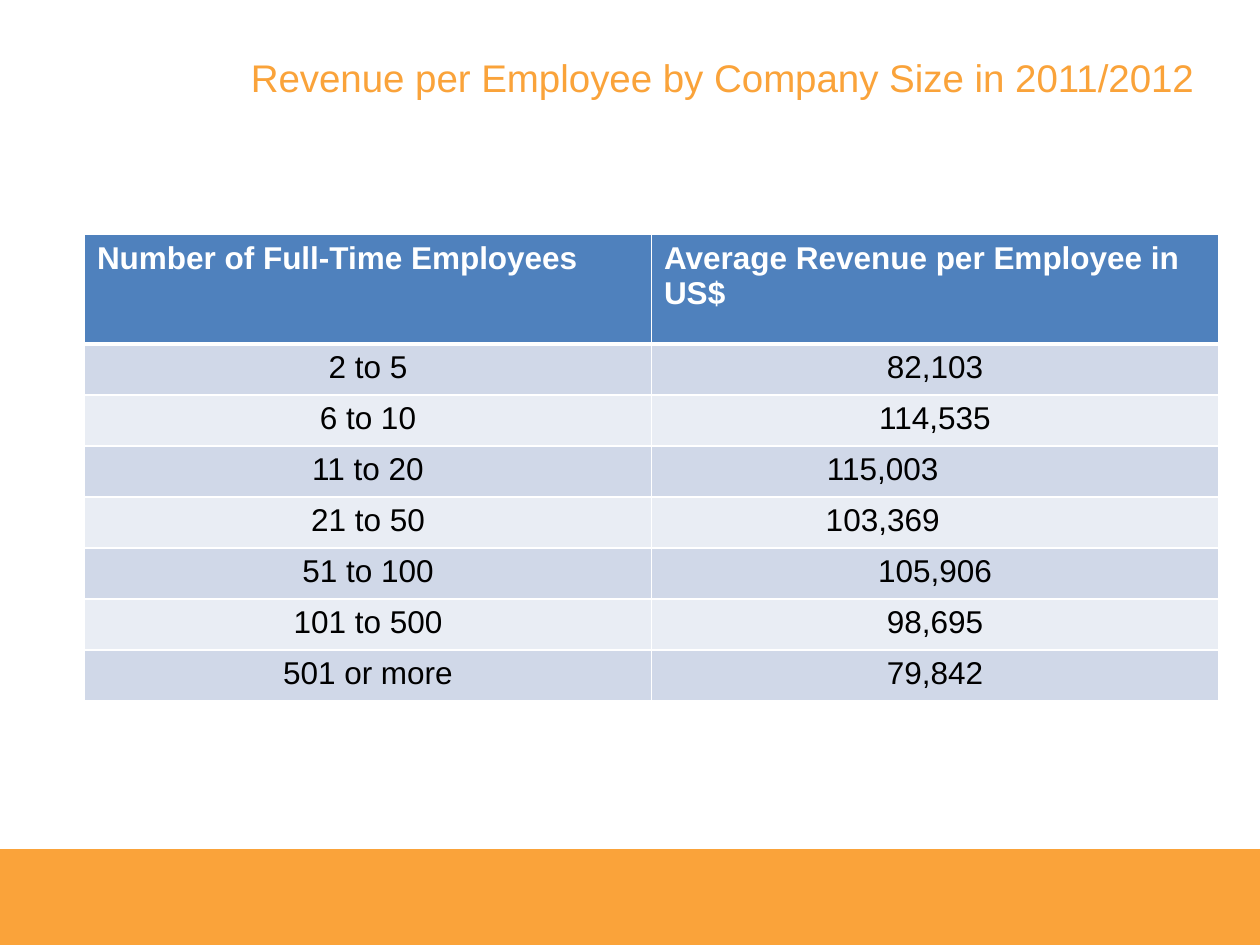
"""Build a slide with a table of revenue per employee by company size."""
from pptx import Presentation
from pptx import util as u
from pptx.dml.color import RGBColor
from pptx.enum import shapes, text
from pptx.oxml import parse_xml
from pptx.oxml.ns import nsdecls

TITLE = "Revenue per Employee by Company Size in 2011/2012"
HEAD = ("Number of Full-Time Employees", "Average Revenue per Employee in US$")
ROWS = [
    ("2 to 5", "82,103"),
    ("6 to 10", "114,535"),
    ("11 to 20", "115,003"),
    ("21 to 50", "103,369"),
    ("51 to 100", "105,906"),
    ("101 to 500", "98,695"),
    ("501 or more", "79,842"),
]
SHIFTED = {"115,003", "103,369"}
THEME = {
    "font": "Arial", "title": 22, "body": 18,
    "orange": "FAA33A", "head": "4F81BD", "bands": ("D0D8E8", "E9EDF4"),
    "white": "FFFFFF", "black": "000000",
}
WIDE, HIGH = 10, 7.5
LEFT, TOP, COL = 0.67, 1.86, 4.5
HEAD_H, ROW_H = 0.87, 0.405
FOOT = 6.74
INSET, SHIFT = 0.1, 0.83


def color(key):
    return RGBColor.from_string(key)


def write(frame, words, size, ink, align, bold=False):
    para = frame.paragraphs[0]
    para.alignment = align
    run = para.add_run()
    run.text = words
    font = run.font
    font.name, font.size, font.bold = THEME["font"], u.Pt(size), bold
    font.color.rgb = color(ink)


def edge(cell, low):
    props = cell._tc.get_or_add_tcPr()
    for side, width in (("L", 1), ("R", 1), ("T", 1), ("B", low)):
        props.append(parse_xml(
            f'<a:ln{side} {nsdecls("a")} w="{u.Pt(width)}"><a:solidFill>'
            f'<a:srgbClr val="{THEME["white"]}"/></a:solidFill></a:ln{side}>'))


def add_table(slide):
    rows = [HEAD, *ROWS]
    grid = slide.shapes.add_table(
        len(rows), len(HEAD), u.Inches(LEFT), u.Inches(TOP),
        u.Inches(COL * len(HEAD)), u.Inches(HEAD_H + ROW_H * len(ROWS))).table
    grid.first_row = grid.horz_banding = False
    for col in grid.columns:
        col.width = u.Inches(COL)
    for i, row in enumerate(rows):
        top = i == 0
        grid.rows[i].height = u.Inches(HEAD_H if top else ROW_H)
        fill = THEME["head"] if top else THEME["bands"][(i - 1) % 2]
        ink = THEME["white"] if top else THEME["black"]
        align = text.PP_ALIGN.LEFT if top else text.PP_ALIGN.CENTER
        for j, words in enumerate(row):
            cell = grid.cell(i, j)
            edge(cell, 3 if i == 0 else 1)
            if i == 1:
                cell._tc.tcPr[2].set("w", str(u.Pt(3)))
            cell.fill.solid()
            cell.fill.fore_color.rgb = color(fill)
            if words in SHIFTED:
                cell.margin_right = u.Inches(INSET + SHIFT)
            write(cell.text_frame, words, THEME["body"], ink, align, top)


def main():
    deck = Presentation()
    deck.slide_width, deck.slide_height = u.Inches(WIDE), u.Inches(HIGH)
    slide = deck.slides.add_slide(deck.slide_layouts[6])
    foot = slide.shapes.add_shape(
        shapes.MSO_SHAPE.RECTANGLE, 0, u.Inches(FOOT),
        u.Inches(WIDE), u.Inches(HIGH - FOOT))
    foot.shadow.inherit = False
    foot.fill.solid()
    foot.fill.fore_color.rgb = color(THEME["orange"])
    foot.line.fill.background()
    add_table(slide)
    box = slide.shapes.add_textbox(*map(u.Inches, (1.83, 0.24, 7.81, 0.75)))
    frame = box.text_frame
    frame.word_wrap = True
    frame.vertical_anchor = text.MSO_ANCHOR.MIDDLE
    write(frame, TITLE, THEME["title"], THEME["orange"], text.PP_ALIGN.CENTER)
    deck.save("out.pptx")


if __name__ == "__main__":
    main()
